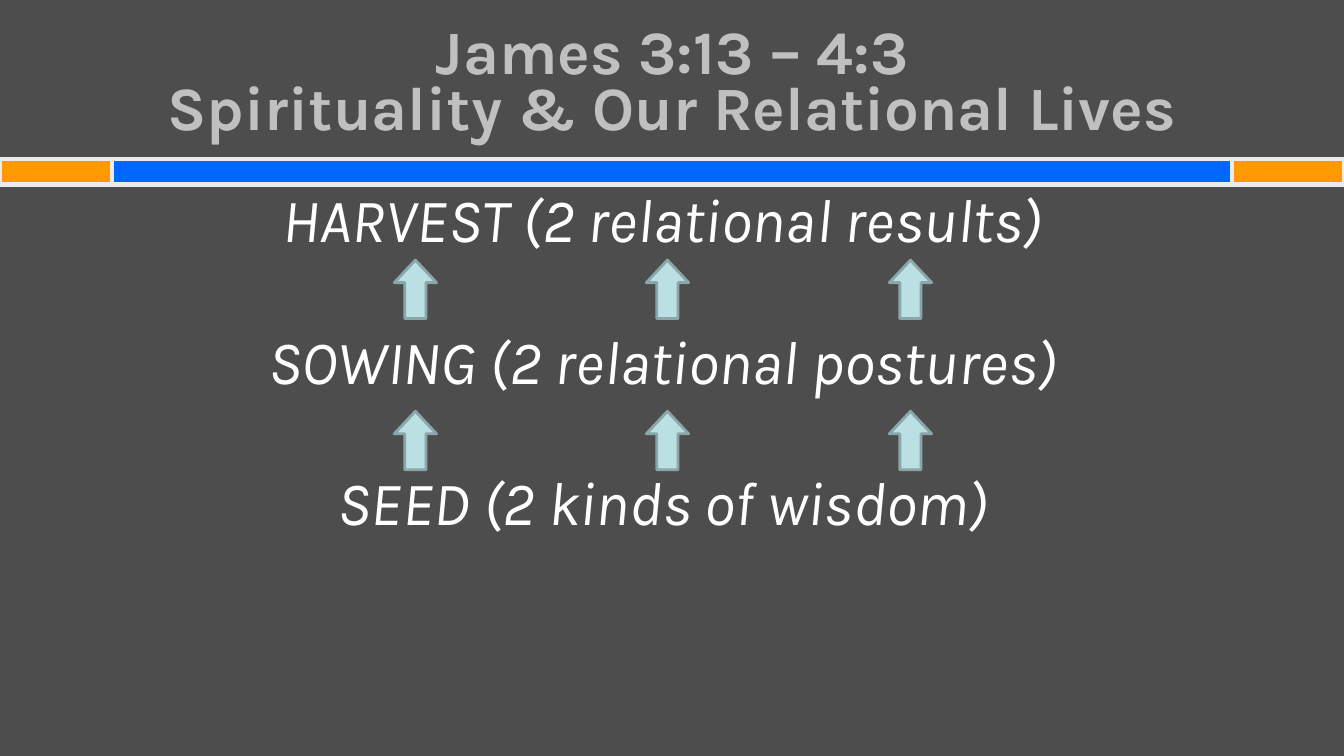
from pptx import Presentation
from pptx.dml.color import RGBColor
from pptx.enum.shapes import MSO_SHAPE as Shape
from pptx.enum.text import MSO_ANCHOR as Anchor, PP_ALIGN as Align
from pptx.util import Inches, Pt

GREY = RGBColor(0x4D, 0x4D, 0x4D)
SILVER = RGBColor(0xC0, 0xC0, 0xC0)
WHITE = RGBColor(0xFF, 0xFF, 0xFF)
PALE = RGBColor(0xEA, 0xEA, 0xEA)
BLUE = RGBColor(0x00, 0x66, 0xFF)
ORANGE = RGBColor(0xFF, 0x99, 0x00)
AQUA = RGBColor(0xBB, 0xE0, 0xE3)
TEAL = RGBColor(0x8A, 0xA6, 0xA8)

WIDTH = 13.33
END = 1.11  # width of an orange bar end
TITLE = "James 3:13 – 4:3\nSpirituality & Our Relational Lives"
STEPS = [
    "HARVEST (2 relational results)",
    "SOWING (2 relational postures)",
    "SEED (2 kinds of wisdom)",
]


def add_shape(slide, kind, box, fill, line, weight):
    shape = slide.shapes.add_shape(kind, *map(Inches, box))
    shape.shadow.inherit = False
    shape.fill.solid()
    shape.fill.fore_color.rgb = fill
    shape.line.color.rgb = line
    shape.line.width = Pt(weight)
    return shape


def add_text(slide, box, lines, color, spacing, gap=0, anchor=Anchor.TOP,
             bold=False, italic=False):
    frame = slide.shapes.add_textbox(*map(Inches, box)).text_frame
    frame.word_wrap = True
    frame.vertical_anchor = anchor
    for i, line in enumerate(lines):
        para = frame.add_paragraph() if i else frame.paragraphs[0]
        para.text = line
        para.alignment = Align.CENTER
        para.line_spacing = spacing
        para.space_before = Pt(gap if i else 0)
        font = para.font
        font.name, font.size = "Karla", Pt(44)
        font.bold, font.italic = bold, italic
        font.color.rgb = color


def add_arrow(slide, left, top):
    arrow = add_shape(slide, Shape.UP_ARROW, (left, top, 0.42, 0.58),
                      AQUA, TEAL, 2)
    arrow.adjustments[0] = 0.5
    arrow.adjustments[1] = 0.534


def main():
    deck = Presentation()
    deck.slide_width, deck.slide_height = Inches(WIDTH), Inches(7.5)
    slide = deck.slides.add_slide(deck.slide_layouts[6])
    slide.background.fill.solid()
    slide.background.fill.fore_color.rgb = GREY

    # Divider bar
    for left, width, fill in [(0, WIDTH, BLUE), (0, END, ORANGE),
                              (WIDTH - END, END, ORANGE)]:
        add_shape(slide, Shape.RECTANGLE, (left, 1.58, width, 0.25),
                  fill, PALE, 3)

    # Title and steps
    add_text(slide, (0.67, 0.3, 12, 1.12), [TITLE], SILVER, Pt(40),
             anchor=Anchor.MIDDLE, bold=True)
    add_text(slide, (0.1, 1.95, 12.95, 5.35), STEPS, WHITE, 0.7,
             gap=64, italic=True)

    # Arrows from each step up to the next
    for top in (2.58, 4.08):
        for left in (3.91, 6.41, 8.82):
            add_arrow(slide, left, top)

    deck.save("out.pptx")


if __name__ == "__main__":
    main()
